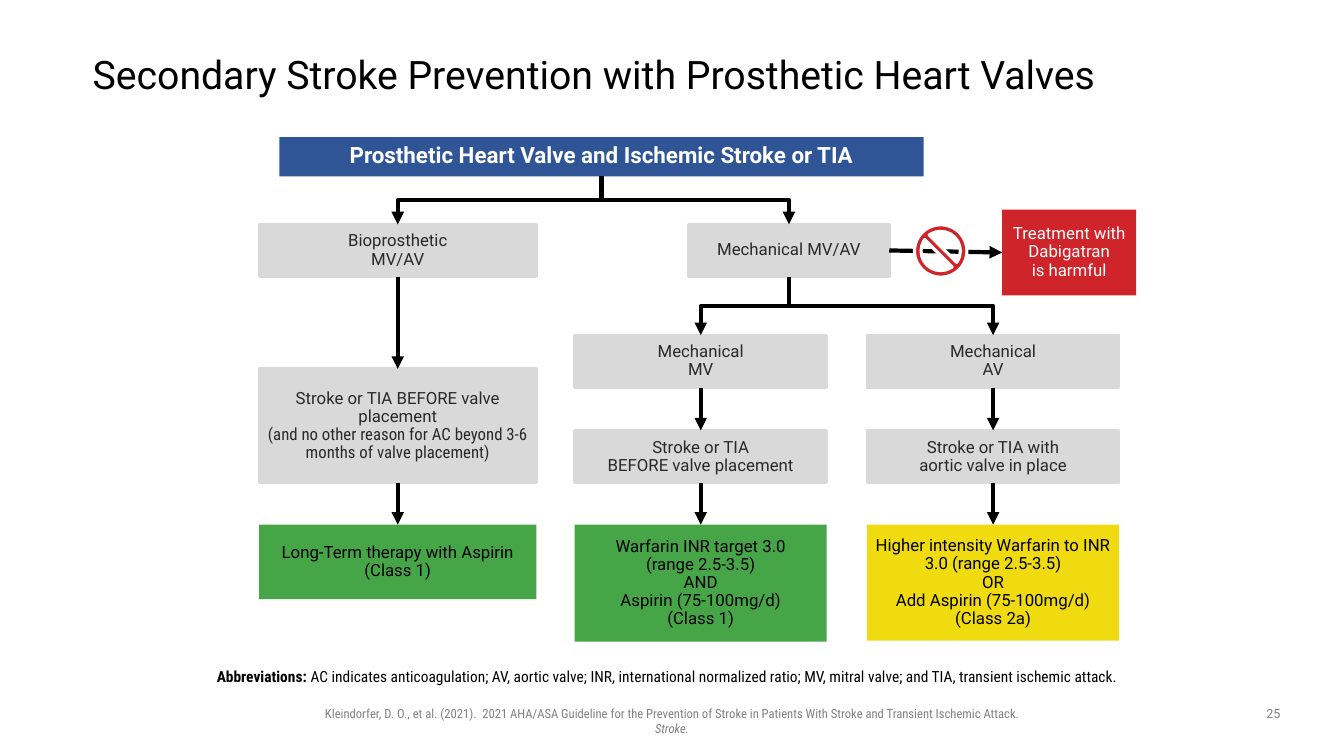
import lxml.etree
import pptx
import pptx.dml.color
import pptx.enum.shapes
import pptx.enum.text
import pptx.oxml.ns
import pptx.util

COLORS = {
    "black": "000000", "white": "FFFFFF", "ink": "292929", "muted": "808080",
    "gray": "D9D9D9", "blue": "2F5597", "red": "CF2429",
    "green": "46A547", "yellow": "F0DB10",
}
CONDENSED = "Roboto Condensed"
SLIDE_WIDTH, SLIDE_HEIGHT = pptx.util.Inches(13.33), pptx.util.Inches(7.5)
COLUMN, ROW = SLIDE_WIDTH / 133.3, SLIDE_HEIGHT / 75
BIO_COLUMN, MITRAL_COLUMN, AORTIC_COLUMN = (25.7, 27.5), (57, 25), (86, 25)
VALVE_ROW, POSITION_ROW, EVENT_ROW = (22.25, 5.2), (33.25, 5.2), (42.7, 5.2)
OUTCOME_TOP = 52.05
TOP, LEFT, BOTTOM, RIGHT = range(4)
CENTER = pptx.enum.text.PP_ALIGN.CENTER
MIDDLE = pptx.enum.text.MSO_ANCHOR.MIDDLE
CONNECTORS = pptx.enum.shapes.MSO_CONNECTOR
SHAPES = pptx.enum.shapes.MSO_SHAPE


def rgb(name):
    return pptx.dml.color.RGBColor.from_string(COLORS[name])


def place(columns, rows):
    (left, width), (top, height) = columns, rows
    return [round(length) for length in
            (left * COLUMN, top * ROW, width * COLUMN, height * ROW)]


def write(frame, paragraphs, size=12, font="Roboto", color="ink", bold=False,
          align=CENTER, anchor=MIDDLE, spacing=0.9, insets=(0, 0, 0, 0)):
    frame.word_wrap = True
    frame.vertical_anchor = anchor
    (frame.margin_left, frame.margin_top,
     frame.margin_right, frame.margin_bottom) = map(pptx.util.Inches, insets)
    for index, runs in enumerate(paragraphs):
        paragraph = frame.paragraphs[0] if index == 0 else frame.add_paragraph()
        paragraph.alignment = align
        paragraph.line_spacing = spacing
        for text, changes in [(runs, {})] if isinstance(runs, str) else runs:
            run = paragraph.add_run()
            run.text = text
            run.font.size = pptx.util.Pt(size)
            run.font.name = changes.get("font", font)
            run.font.bold = changes.get("bold", bold)
            run.font.italic = changes.get("italic", False)
            run.font.color.rgb = rgb(color)


def add_label(slide, columns, rows, paragraphs, **text_format):
    label = slide.shapes.add_textbox(*place(columns, rows))
    write(label.text_frame, paragraphs, **text_format)


def add_filled(slide, preset, columns, rows, fill, outline=None, weight=2):
    shape = slide.shapes.add_shape(preset, *place(columns, rows))
    shape.shadow.inherit = False
    shape.fill.solid()
    shape.fill.fore_color.rgb = rgb(fill)
    if outline:
        shape.line.color.rgb = rgb(outline)
        shape.line.width = pptx.util.Pt(weight)
    else:
        shape.line.fill.background()
    return shape


def add_step(slide, columns, rows, paragraphs, fill="gray", **text_format):
    outline = "gray" if fill == "gray" else None
    step = add_filled(slide, SHAPES.RECTANGLE, columns, rows, fill, outline)
    write(step.text_frame, paragraphs, **text_format)
    return step


def add_arrow(slide, source, target, kind=CONNECTORS.STRAIGHT, start=BOTTOM, end=TOP):
    arrow = slide.shapes.add_connector(kind, 0, 0, 0, 0)
    arrow.begin_connect(source, start)
    arrow.end_connect(target, end)
    arrow.line.color.rgb = rgb("black")
    arrow.line.width = pptx.util.Pt(3)
    properties = arrow._element.spPr
    outline = properties.find(pptx.oxml.ns.qn("a:ln"))
    lxml.etree.SubElement(outline, pptx.oxml.ns.qn("a:tailEnd"), type="triangle")
    lxml.etree.SubElement(properties, pptx.oxml.ns.qn("a:effectLst"))
    return arrow


def add_branch(slide, source, target):
    branch = add_arrow(slide, source, target, CONNECTORS.ELBOW)
    goes_right = branch.end_x > branch.begin_x
    across, down = branch.width, branch.height
    branch.left += (across - down) // 2
    branch.top += (down - across) // 2
    branch.width, branch.height = down, across
    frame = branch._element.spPr.find(pptx.oxml.ns.qn("a:xfrm"))
    frame.set("rot", "16200000" if goes_right else "5400000")
    frame.set("flipH", "1" if goes_right else "0")


def add_pathways(slide):
    stroke = add_step(slide, (27.7, 63.9), (13.6, 3.9),
                      ["Prosthetic Heart Valve and Ischemic Stroke or TIA"],
                      fill="blue", size=16, color="white", bold=True)
    bioprosthetic = add_step(slide, BIO_COLUMN, VALVE_ROW, ["Bioprosthetic", "MV/AV"])
    mechanical = add_step(slide, (68.3, 19.9), VALVE_ROW, ["Mechanical MV/AV"])
    dabigatran = add_step(slide, (99.4, 13.3), (20.8, 8.5),
                          ["Treatment with Dabigatran", "is harmful"],
                          fill="red", color="white")
    mitral = add_step(slide, MITRAL_COLUMN, POSITION_ROW, ["Mechanical", "MV"])
    aortic = add_step(slide, AORTIC_COLUMN, POSITION_ROW, ["Mechanical", "AV"])

    bio_event = add_step(
        slide, BIO_COLUMN, (36.6, 11.3),
        ["Stroke or TIA BEFORE valve placement",
         [("(and no other reason for AC beyond 3-6 months of valve placement)",
           {"font": CONDENSED})]])
    mitral_event = add_step(slide, MITRAL_COLUMN, EVENT_ROW,
                            ["Stroke or TIA", "BEFORE valve placement"])
    aortic_event = add_step(slide, AORTIC_COLUMN, EVENT_ROW,
                            ["Stroke or TIA with", "aortic valve in place"])

    aspirin = add_step(slide, BIO_COLUMN, (OUTCOME_TOP, 7.4),
                       ["Long-Term therapy with Aspirin", "(Class 1)"],
                       fill="green", color="black")
    warfarin = add_step(slide, MITRAL_COLUMN, (OUTCOME_TOP, 11.6),
                        ["Warfarin INR target 3.0", "(range 2.5-3.5)", "AND",
                         "Aspirin (75-100mg/d)", "(Class 1)"],
                        fill="green", color="black")
    higher_intensity = add_step(
        slide, AORTIC_COLUMN, (OUTCOME_TOP, 11.5),
        ["Higher intensity Warfarin to INR 3.0 (range 2.5-3.5)", "OR",
         "Add Aspirin (75-100mg/d)", "(Class 2a)"],
        fill="yellow", color="black")

    for source, target in ((stroke, bioprosthetic), (stroke, mechanical),
                           (mechanical, mitral), (mechanical, aortic)):
        add_branch(slide, source, target)
    for pathway in ((bioprosthetic, bio_event, aspirin),
                    (mitral, mitral_event, warfarin),
                    (aortic, aortic_event, higher_intensity)):
        for source, target in zip(pathway, pathway[1:]):
            add_arrow(slide, source, target)
    add_arrow(slide, mechanical, dabigatran, start=RIGHT, end=LEFT)
    prohibition = add_filled(slide, SHAPES.NO_SYMBOL, (90.7, 5.2), (22.3, 5.2),
                             "red", "white", 2.25)
    prohibition.adjustments[0] = 0.125


def main():
    presentation = pptx.Presentation()
    presentation.slide_width, presentation.slide_height = SLIDE_WIDTH, SLIDE_HEIGHT
    slide = presentation.slides.add_slide(presentation.slide_layouts[6])

    add_label(slide, (9.2, 115), (4, 7.2),
              ["Secondary Stroke Prevention with Prosthetic Heart Valves"],
              size=28, color="black", align=pptx.enum.text.PP_ALIGN.LEFT)
    add_pathways(slide)

    top = pptx.enum.text.MSO_ANCHOR.TOP
    add_label(slide, (9.2, 115), (65.9, 3),
              [[("Abbreviations: ", {"bold": True}),
                ("AC indicates anticoagulation; AV, aortic valve; INR, international "
                 "normalized ratio; MV, mitral valve; and TIA, transient ischemic "
                 "attack.", {})]],
              size=11, font=CONDENSED, color="black", anchor=top,
              insets=(0, 0.05, 0.1, 0.05))
    footer = {"size": 9, "color": "muted", "anchor": top, "spacing": 1,
              "insets": (0.1, 0.05, 0.1, 0.05)}
    add_label(slide, (29.4, 74.5), (69.5, 2.5),
              ["Kleindorfer, D. O., et al. (2021).  2021 AHA/ASA Guideline for the "
               "Prevention of Stroke in Patients With Stroke and Transient Ischemic "
               "Attack.", [("Stroke.", {"italic": True})]],
              font=CONDENSED, **footer)
    add_label(slide, (124.2, 4.2), (69.5, 2.6), ["25"], **footer)
    presentation.save("out.pptx")


if __name__ == "__main__":
    main()
